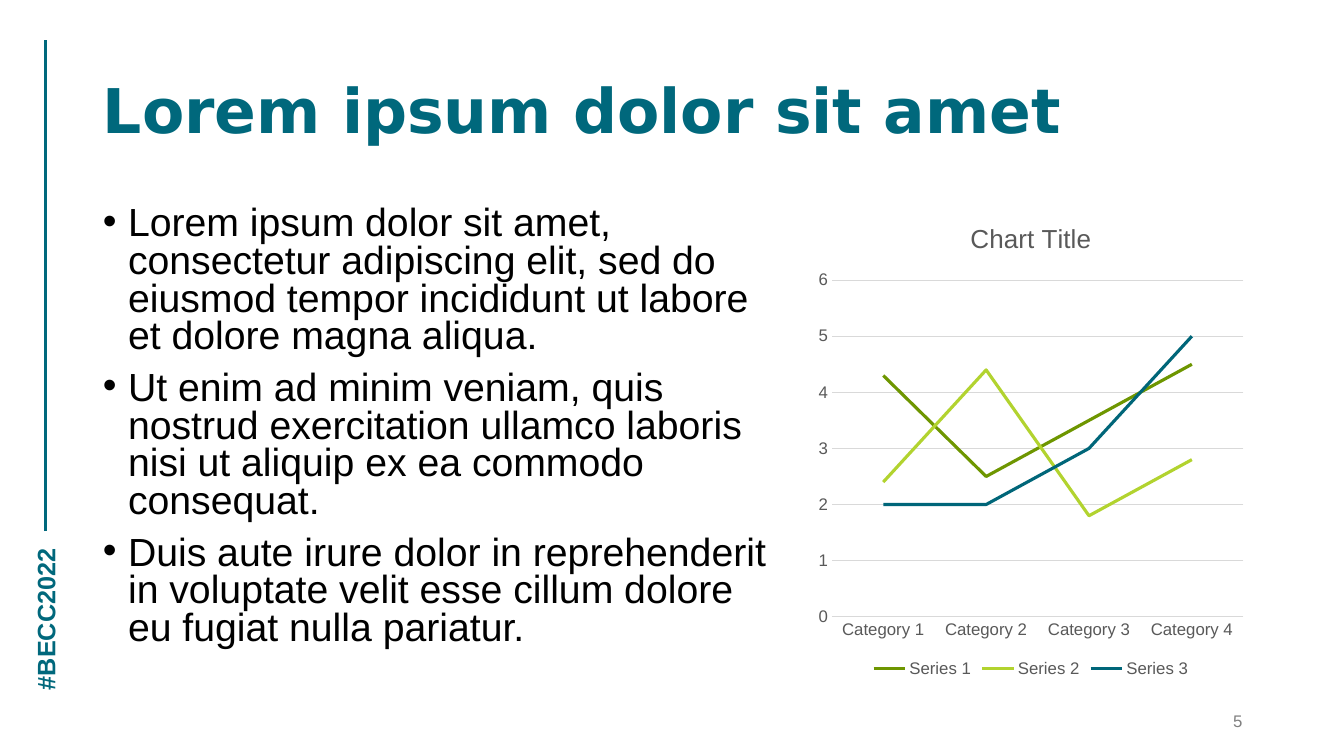
from lxml.etree import SubElement
from pptx import Presentation
from pptx.chart.data import CategoryChartData as ChartData
from pptx.dml.color import RGBColor as Rgb
from pptx.enum.chart import XL_CHART_TYPE as Kind, XL_LEGEND_POSITION as Spot
from pptx.enum.chart import XL_MARKER_STYLE as Marker, XL_TICK_MARK as Tick
from pptx.enum.shapes import MSO_CONNECTOR as Link
from pptx.enum.text import MSO_ANCHOR as Anchor, MSO_AUTO_SIZE as Fit, PP_ALIGN as Align
from pptx.oxml.ns import qn
from pptx.util import Inches, Pt

# Content
TITLE = "Lorem ipsum dolor sit amet"
POINTS = [
    "Lorem ipsum dolor sit amet, consectetur adipiscing elit, sed do eiusmod "
    "tempor incididunt ut labore et dolore magna aliqua.",
    "Ut enim ad minim veniam, quis nostrud exercitation ullamco laboris nisi "
    "ut aliquip ex ea commodo consequat.",
    "Duis aute irure dolor in reprehenderit in voluptate velit esse cillum "
    "dolore eu fugiat nulla pariatur.",
]
TAG = "#BECC2022"
PAGE = "5"
HEAD = "Chart Title"
CATS = ["Category 1", "Category 2", "Category 3", "Category 4"]
SERIES = [
    ("Series 1", "green", (4.3, 2.5, 3.5, 4.5)),
    ("Series 2", "lime", (2.4, 4.4, 1.8, 2.8)),
    ("Series 3", "blue", (2, 2, 3, 5)),
]
COLORS = {"teal": "00687C", "black": "000000", "page": "808080",
          "text": "595959", "grid": "D9D9D9",
          "green": "6E9600", "lime": "B2D32F", "blue": "006679"}

# Layout, in inches
WIDE, HIGH = 13.33, 7.5
LEFT, TOP, FULL = 0.92, 0.4, 11.5
RIGHT = LEFT + FULL
ROW, TALL = 2, 4.76
LIST_W, CHART_W = 6.85, 4.39
RAIL = 0.45
TAG_W, TAG_MID = 1.67, 6.11
LINE_H = 0.4
PAGE_W = 3


def color(name):
    return Rgb.from_string(COLORS[name])


def style(font, size, name, bold=False, face="Arial"):
    font.size, font.bold, font.name = Pt(size), bold, face
    font.color.rgb = color(name)


def stroke(line, name, width):
    line.color.rgb = color(name)
    line.width = Pt(width)


def place(shape, x, y, w, h):
    shape.left, shape.top = Inches(x), Inches(y)
    shape.width, shape.height = Inches(w), Inches(h)


def label(x, y, w, text, size, name, bold=False):
    box = slide.shapes.add_textbox(*map(Inches, (x, y, w, LINE_H)))
    frame = box.text_frame
    frame.word_wrap = True
    frame.text = text
    style(frame.paragraphs[0].runs[0].font, size, name, bold)
    return box


deck = Presentation()
deck.slide_width, deck.slide_height = Inches(WIDE), Inches(HIGH)
slide = deck.slides.add_slide(deck.slide_layouts[1])

# Side rail: hashtag and line
tag = label(RAIL - TAG_W / 2, TAG_MID - LINE_H / 2, TAG_W, TAG, 18, "teal", True)
tag.rotation = 270
rail = slide.shapes.add_connector(
    Link.STRAIGHT, *map(Inches, (RAIL, 5.27, RAIL, TOP)))
stroke(rail.line, "teal", 2.25)
SubElement(rail._element.spPr, qn("a:effectLst"))

# Title
title = slide.shapes.title
place(title, LEFT, TOP, FULL, 1.45)
frame = title.text_frame
frame.text = TITLE
frame.auto_size = Fit.NONE
frame.vertical_anchor = Anchor.MIDDLE
para = frame.paragraphs[0]
para.alignment, para.line_spacing = Align.LEFT, 0.9
style(para.runs[0].font, 44, "teal", True, "DejaVu Sans")

# Bullet list
body = slide.placeholders[1]
place(body, LEFT, ROW, LIST_W, TALL)
frame = body.text_frame
frame.text = "\n".join(POINTS)
frame.auto_size = Fit.NONE
for i, para in enumerate(frame.paragraphs):
    para.line_spacing = 0.8
    para.space_before = Pt(10 if i else 0)
    props = para._p.get_or_add_pPr()
    props.set("marL", str(Inches(0.25)))
    props.set("indent", str(-Inches(0.25)))
    SubElement(props, qn("a:buFont"), typeface="Arial")
    SubElement(props, qn("a:buChar"), char="•")
    style(para.runs[0].font, 28, "black")

# Line chart
data = ChartData()
data.categories = CATS
for name, _, vals in SERIES:
    data.add_series(name, vals)
chart = slide.shapes.add_chart(
    Kind.LINE, *map(Inches, (RIGHT - CHART_W, ROW, CHART_W, TALL)), data).chart
style(chart.font, 10, "black")
chart.has_title = True
frame = chart.chart_title.text_frame
frame.text = HEAD
style(frame.paragraphs[0].runs[0].font, 18.6, "text")
chart.chart_title.include_in_layout = False

chart.has_legend = True
chart.legend.position = Spot.BOTTOM
chart.legend.include_in_layout = False
style(chart.legend.font, 12, "text")

plot = chart.plots[0]
plot.vary_by_categories = False
for line, (_, name, _) in zip(plot.series, SERIES):
    line.smooth = False
    line.marker.style = Marker.NONE
    stroke(line.format.line, name, 2.25)

cat, val = chart.category_axis, chart.value_axis
for axis in (cat, val):
    axis.major_tick_mark = axis.minor_tick_mark = Tick.NONE
    style(axis.tick_labels.font, 12, "text")
stroke(cat.format.line, "grid", 0.75)
val.format.line.fill.background()
val.has_major_gridlines = True
stroke(val.major_gridlines.format.line, "grid", 0.75)
val.minimum_scale, val.maximum_scale, val.major_unit = 0, 6, 1

# Page number
page = label(RIGHT - PAGE_W, 6.95, PAGE_W, PAGE, 12, "page")
page.text_frame.vertical_anchor = Anchor.MIDDLE
page.text_frame.paragraphs[0].alignment = Align.RIGHT

deck.save("out.pptx")
